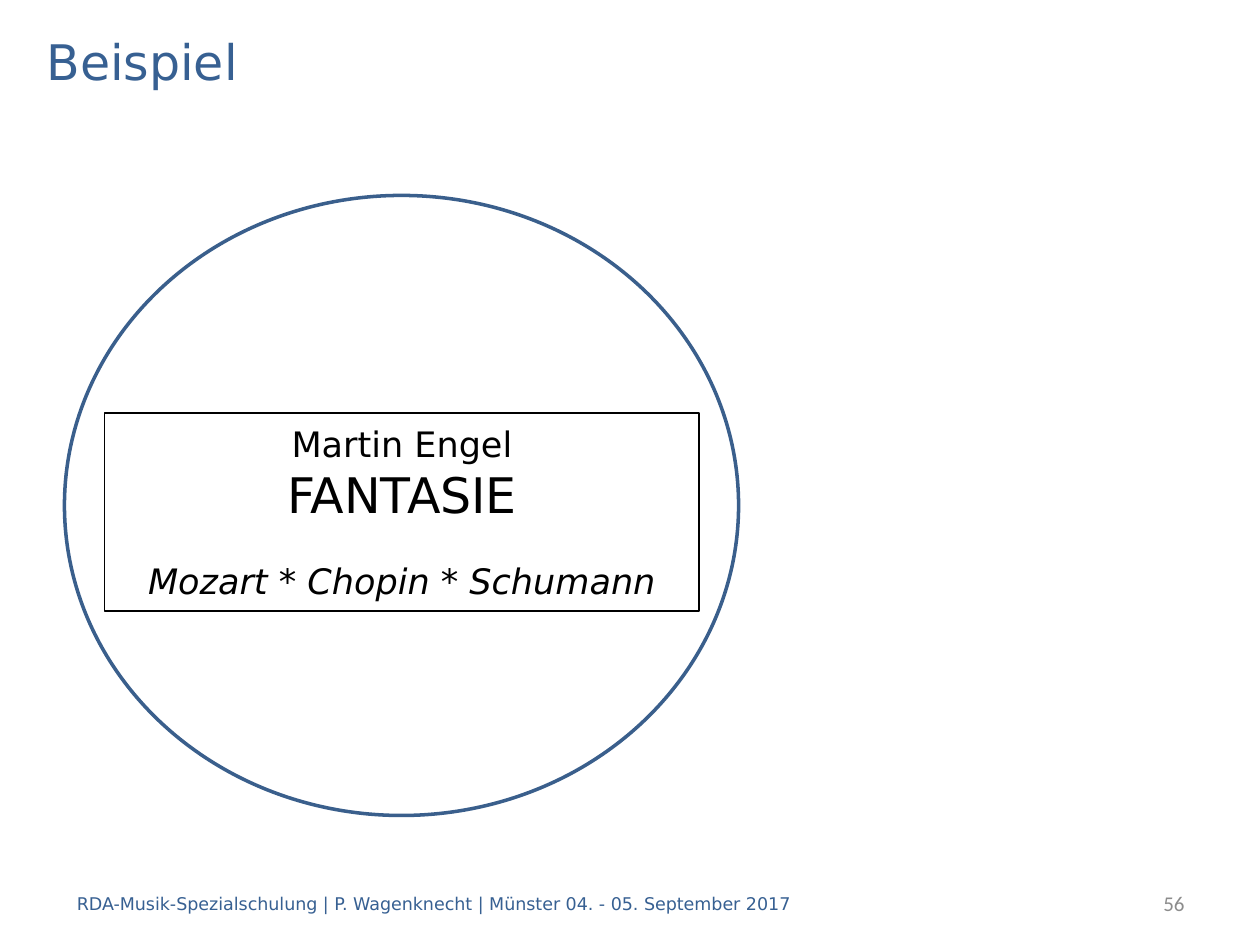
import pptx
import pptx.util
import pptx.dml.color
import pptx.enum.shapes
import pptx.enum.text

Cm, Pt = pptx.util.Cm, pptx.util.Pt
Form = pptx.enum.shapes.MSO_SHAPE
Align = pptx.enum.text.PP_ALIGN


def paint(code):
    return pptx.dml.color.RGBColor.from_string(code)


class Page:
    face = "DejaVu Sans"
    blue, edge, black, grey = "376092", "3A5F8C", "000000", "8C8C8C"

    def __init__(self, deck):
        self.slide = deck.slides.add_slide(deck.slide_layouts[6])

    def letter(self, shape, lines, color, align=Align.LEFT, face=None):
        """Fill a shape with lines of (text, size, italic, space before)."""
        frame = shape.text_frame
        frame.word_wrap = True
        frame.vertical_anchor = pptx.enum.text.MSO_ANCHOR.MIDDLE
        for i, (text, size, slant, gap) in enumerate(lines):
            para = frame.add_paragraph() if i else frame.paragraphs[0]
            para.text = text
            para.alignment = align
            if gap:
                para.space_before = Pt(gap)
            font = para.font
            font.name = face or self.face
            font.size = Pt(size)
            font.italic = slant
            font.color.rgb = paint(color)

    def label(self, box, text, size, color, **style):
        shape = self.slide.shapes.add_textbox(*map(Cm, box))
        self.letter(shape, [(text, size, False, 0)], color, **style)

    def outline(self, form, box, color, width):
        shape = self.slide.shapes.add_shape(form, *map(Cm, box))
        shape.shadow.inherit = False
        shape.fill.background()
        shape.line.color.rgb = paint(color)
        shape.line.width = Pt(width)
        return shape


def main():
    deck = pptx.Presentation()
    deck.slide_width, deck.slide_height = Cm(25.4), Cm(19.05)
    page = Page(deck)

    # Footer
    page.label((1.3, 17.7, 17, 1.02),
               "RDA-Musik-Spezialschulung | P. Wagenknecht | "
               "Münster 04. - 05. September 2017", 10, page.blue)

    # Disc with its printed title
    page.outline(Form.OVAL, (1.3, 3.94, 13.59, 12.5), page.edge, 2)
    plate = page.outline(Form.RECTANGLE, (2.11, 8.33, 11.99, 3.99), page.black, 1)
    page.letter(plate, [
        ("Martin Engel", 20, False, 0),
        ("FANTASIE", 28, False, 0),
        ("Mozart * Chopin * Schumann", 20, True, 21),
    ], page.black, Align.CENTER)

    # Heading and page number
    page.label((0.69, 0.51, 24, 1.42), "Beispiel", 28, page.blue)
    page.label((20.09, 17.7, 4.04, 1.02), "56", 12, page.grey,
               align=Align.RIGHT, face="Calibri")

    deck.save("out.pptx")


if __name__ == "__main__":
    main()
